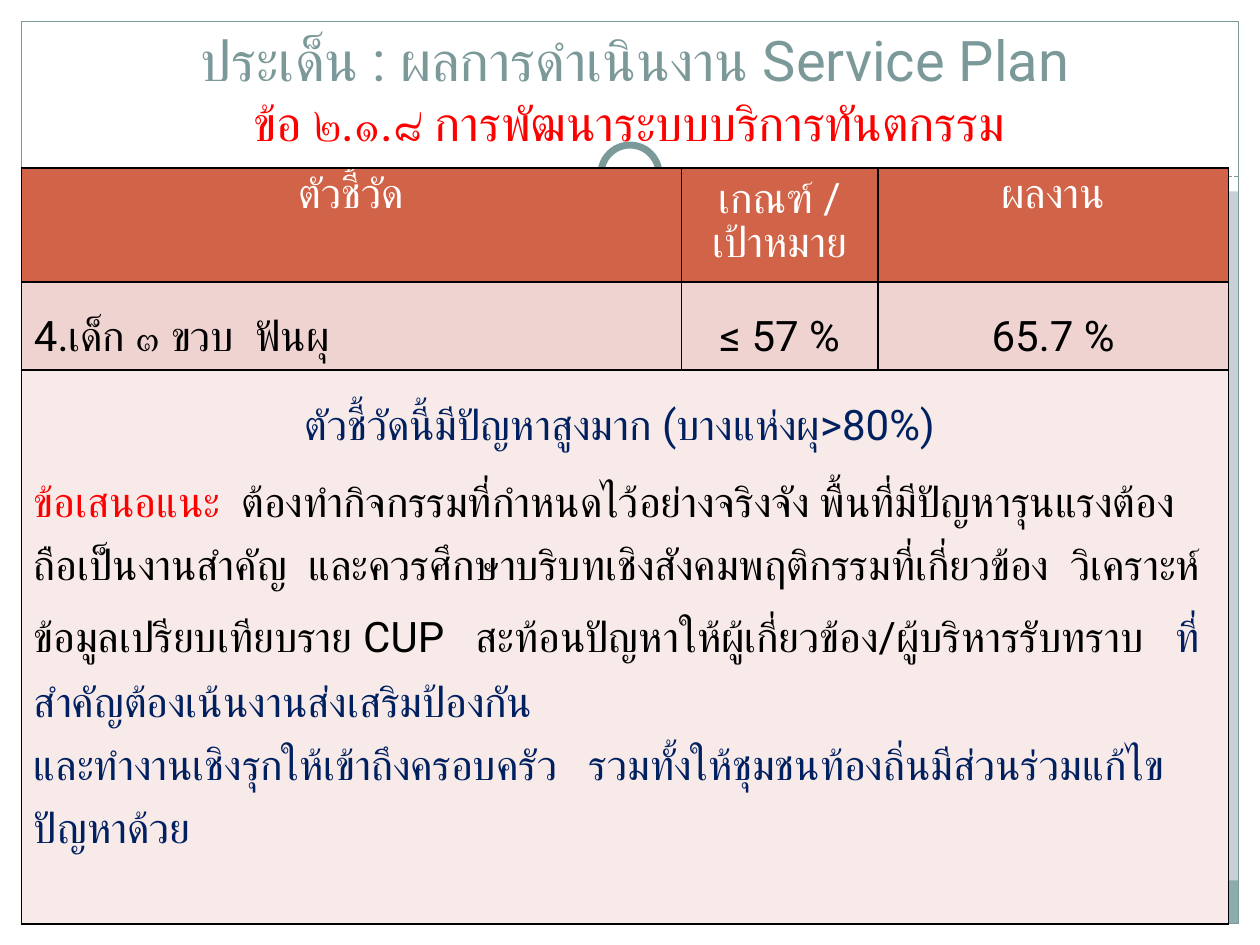
from lxml import etree
from pptx import Presentation, util as u
from pptx.dml.color import RGBColor
from pptx.enum import dml, shapes, text
from pptx.oxml import ns

WHITE = RGBColor(0xFF, 0xFF, 0xFF)
BLACK = RGBColor(0, 0, 0)
RED = RGBColor(0xFF, 0, 0)
NAVY = RGBColor(0x00, 0x20, 0x60)
TEAL = RGBColor(0x7C, 0x99, 0x9A)
BAND = RGBColor(0x8C, 0xAD, 0xAE)
BACKGROUND = RGBColor(0xC5, 0xD1, 0xD7)
HEADER = RGBColor(0xD1, 0x63, 0x49)
ROW = RGBColor(0xEE, 0xD3, 0xD0)
NOTE = RGBColor(0xF7, 0xEA, 0xE9)
FONT = "Roboto"
CENTER = text.PP_ALIGN.CENTER
LEFT = text.PP_ALIGN.LEFT
RECT = shapes.MSO_SHAPE.RECTANGLE
OVAL = shapes.MSO_SHAPE.OVAL


def add_box(s, kind, x, y, w, h, fill=None, line=None, weight=0.75):
    """Add a preset shape, measured in centimetres."""
    sp = s.shapes.add_shape(kind, u.Cm(x), u.Cm(y), u.Cm(w), u.Cm(h))
    sp.shadow.inherit = False
    if fill is None:
        sp.fill.background()
    else:
        sp.fill.solid()
        sp.fill.fore_color.rgb = fill
    if line is None:
        sp.line.fill.background()
    else:
        sp.line.color.rgb = line
        sp.line.width = u.Pt(weight)
    return sp


def add_run(p, words, size, color):
    """Append one formatted run to a paragraph."""
    r = p.add_run()
    r.text = words
    r.font.name = FONT
    r.font.size = u.Pt(size)
    r.font.color.rgb = color


def add_frame(s, w, h, margin=0.43, top=3.86):
    """Draw the white margins, bottom band, outline, dashed rule and ring."""
    add_box(s, RECT, 0, h - margin, w, margin, WHITE)
    add_box(s, RECT, 0, 0, w, top, WHITE)
    for x in (0, w - margin):
        add_box(s, RECT, x, 0, margin, h, WHITE)
    inner = w - 2 * margin
    add_box(s, RECT, margin, 17.75, inner, 0.87, BAND)
    add_box(s, RECT, margin, margin, inner, h - 2 * margin, line=TEAL)

    rule_y = 3.56
    rule = s.shapes.add_connector(shapes.MSO_CONNECTOR.STRAIGHT, u.Cm(margin),
                                  u.Cm(rule_y), u.Cm(w - margin), u.Cm(rule_y))
    rule.line.color.rgb = TEAL
    rule.line.width = u.Pt(0.75)
    rule.line.dash_style = dml.MSO_LINE.SQUARE_DOT
    etree.SubElement(rule._element.spPr, ns.qn("a:effectLst"))

    for size, line in ((1.7, None), (1.17, TEAL)):
        add_box(s, OVAL, (w - size) / 2, 3.51 - size / 2, size, size, WHITE, line, 4)


def add_title(s, x, y, w, h):
    """Place the two-line heading at the bottom of its box."""
    tf = s.shapes.add_textbox(u.Cm(x), u.Cm(y), u.Cm(w), u.Cm(h)).text_frame
    tf.word_wrap = True
    tf.vertical_anchor = text.MSO_ANCHOR.BOTTOM
    p = tf.paragraphs[0]
    p.alignment = CENTER
    add_run(p, "ประเด็น : ผลการดำเนินงาน Service Plan", 32, TEAL)
    p.add_line_break()
    add_run(p, "ข้อ ๒.๑.๘ การพัฒนาระบบบริการทันตกรรม ", 28, RED)


def style_cell(cell, fill):
    """Give a cell its fill and thin black borders."""
    cell.fill.solid()
    cell.fill.fore_color.rgb = fill
    props = cell._tc.get_or_add_tcPr()
    for i, side in enumerate(("lnL", "lnR", "lnT", "lnB")):
        ln = etree.Element(ns.qn(f"a:{side}"), w=str(u.Pt(1)))
        solid = etree.SubElement(ln, ns.qn("a:solidFill"))
        etree.SubElement(solid, ns.qn("a:srgbClr"), val=str(BLACK))
        props.insert(i, ln)


def write_cell(cell, paragraphs, spacing=None):
    """Fill a cell with (alignment, space before, runs) paragraphs."""
    tf = cell.text_frame
    for i, (align, before, runs) in enumerate(paragraphs):
        p = tf.add_paragraph() if i else tf.paragraphs[0]
        p.alignment = align
        p.line_spacing = spacing
        p.space_before = u.Pt(before)
        for words, color in runs:
            add_run(p, words, 24, color)


def add_indicator_table(s, x, y, widths, heights):
    """Build the indicator table with its merged recommendation row."""
    table = s.shapes.add_table(len(heights), len(widths), u.Cm(x), u.Cm(y),
                               u.Cm(sum(widths)), u.Cm(sum(heights))).table
    for column, width in zip(table.columns, widths):
        column.width = u.Cm(width)
    for row, height, fill in zip(table.rows, heights, (HEADER, ROW, NOTE)):
        row.height = u.Cm(height)
        for cell in row.cells:
            style_cell(cell, fill)

    for i, words in enumerate(("ตัวชี้วัด", "เกณฑ์ / เป้าหมาย", "ผลงาน")):
        write_cell(table.cell(0, i), [(CENTER, 0, [(words, WHITE)])])
    for i, words in enumerate(("4.เด็ก ๓ ขวบ  ฟันผุ", "≤ 57 %", "65.7 %")):
        write_cell(table.cell(1, i), [(CENTER if i else LEFT, 0, [(words, BLACK)])], 1.5)

    note = table.cell(2, 0)
    note.merge(table.cell(2, len(widths) - 1))
    write_cell(note, [
        (CENTER, 0, [("ตัวชี้วัดนี้มีปัญหาสูงมาก (บางแห่งผุ>80%) ", NAVY)]),
        (LEFT, 7, [
            ("ข้อเสนอแนะ  ", RED),
            ("ต้องทำกิจกรรมที่กำหนดไว้อย่างจริงจัง พื้นที่มีปัญหารุนแรงต้อง"
             "ถือเป็นงานสำคัญ  และควรศึกษาบริบทเชิงสังคมพฤติกรรมที่เกี่ยวข้อง  "
             "วิเคราะห์ข้อมูลเปรียบเทียบราย CUP   "
             "สะท้อนปัญหาให้ผู้เกี่ยวข้อง/ผู้บริหารรับทราบ   ", BLACK),
            ("ที่สำคัญต้องเน้นงานส่งเสริมป้องกัน", NAVY)]),
        (LEFT, 0, [("และทำงานเชิงรุกให้เข้าถึงครอบครัว   "
                    "รวมทั้งให้ชุมชนท้องถิ่นมีส่วนร่วมแก้ไขปัญหาด้วย", NAVY)]),
    ], 1.5)


def main():
    """Build the slide and save it."""
    prs = Presentation()
    prs.slide_width, prs.slide_height = u.Cm(25.4), u.Cm(19.05)
    s = prs.slides.add_slide(prs.slide_layouts[6])
    s.background.fill.solid()
    s.background.fill.fore_color.rgb = BACKGROUND
    add_frame(s, 25.4, 19.05)
    add_title(s, 0.64, 0, 24.33, 3.18)
    add_indicator_table(s, 0.43, 3.39, (13.31, 3.96, 7.06), (2.29, 1.63, 10.16))
    prs.save("out.pptx")


if __name__ == "__main__":
    main()
